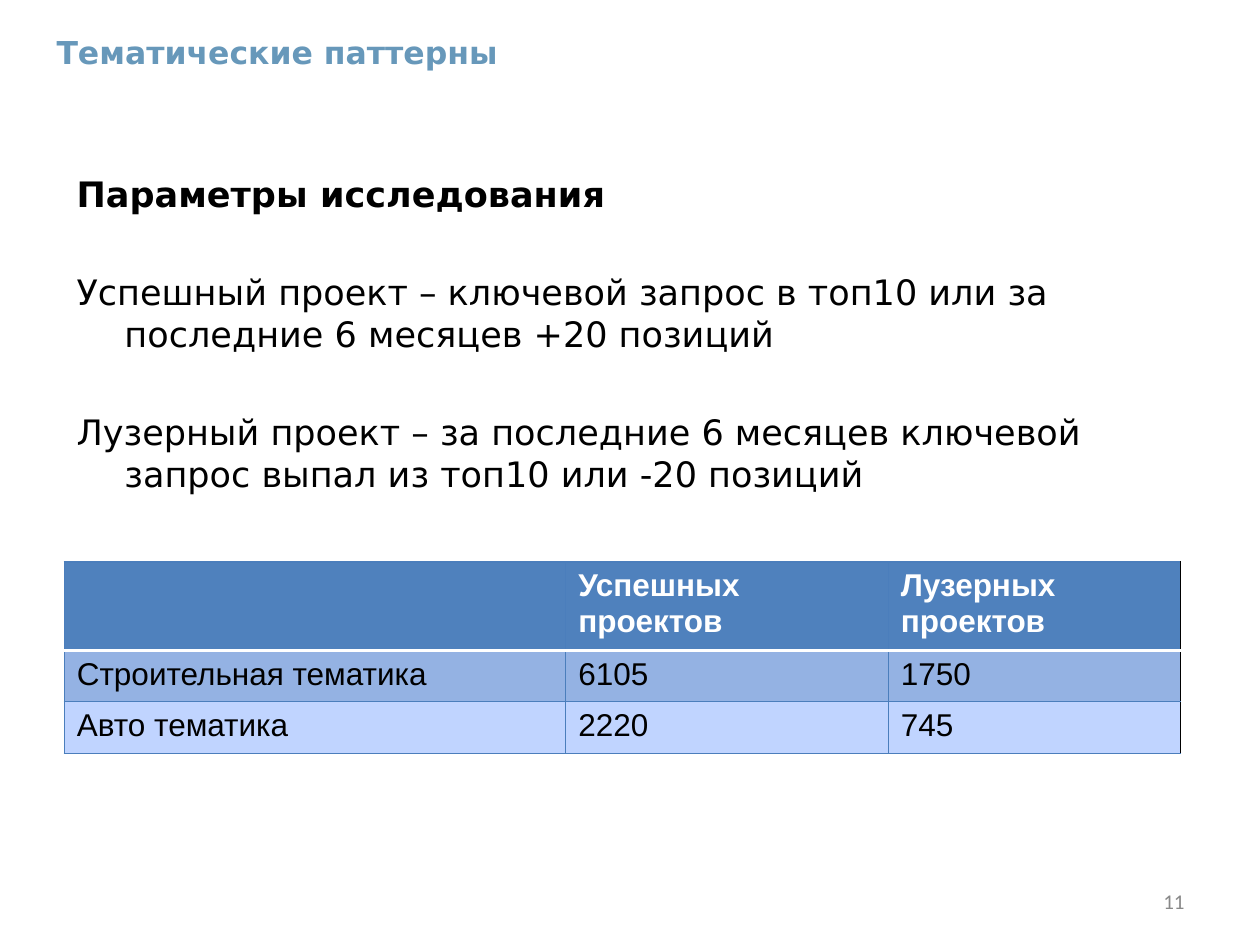
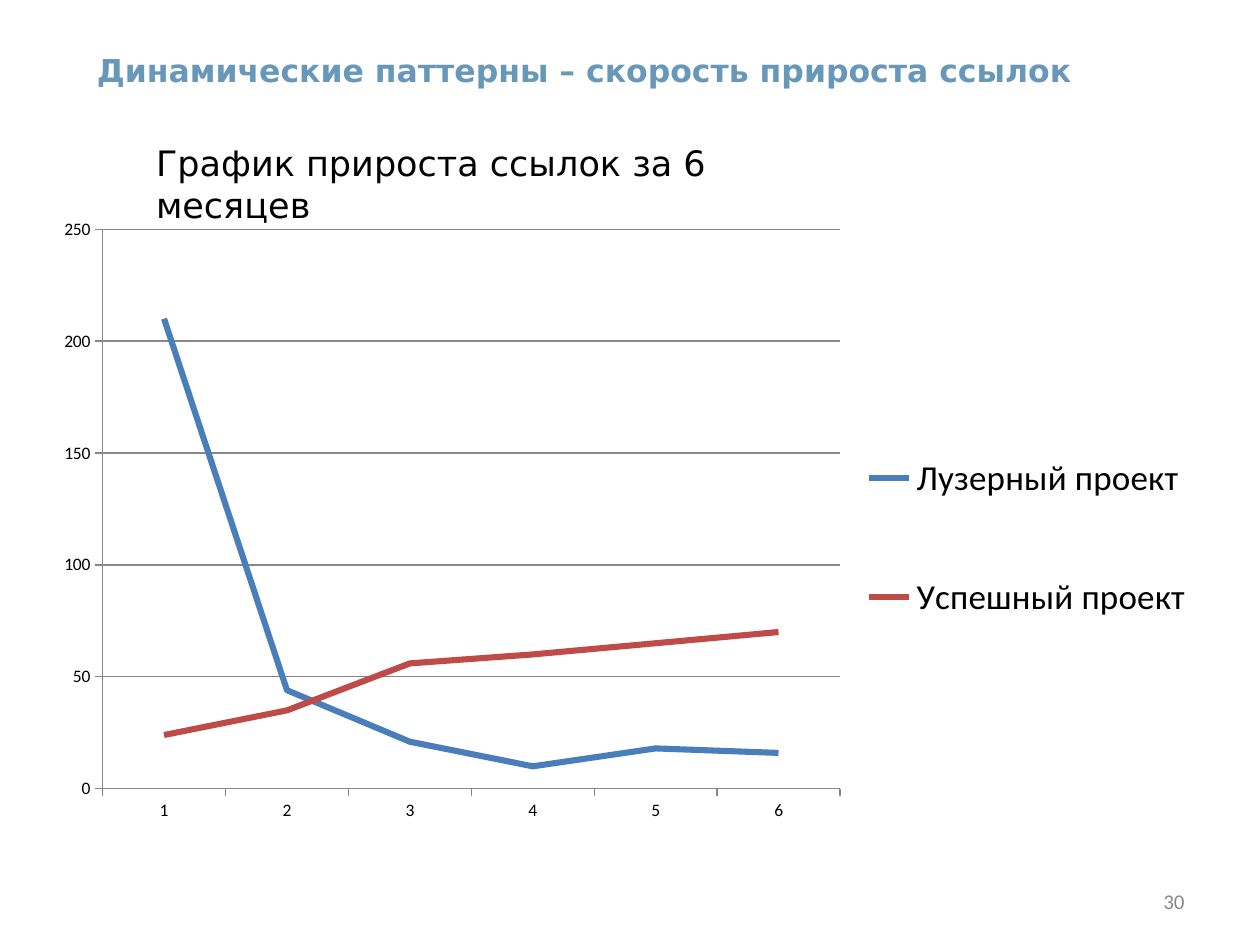
from lxml import etree
from pptx import Presentation
from pptx.chart.data import CategoryChartData
from pptx.dml.color import RGBColor
from pptx.enum import chart as charts, text
from pptx.oxml import ns
from pptx.util import Inches, Pt

# Content
THEMES = {
    "title": "Тематические паттерны",
    "heading": "Параметры исследования",
    "definitions": [
        "Успешный проект – ключевой запрос в топ10 или за последние 6 месяцев +20 позиций",
        "Лузерный проект – за последние 6 месяцев ключевой запрос выпал из топ10 или -20 позиций",
    ],
    "rows": [
        ("", "Успешных проектов", "Лузерных проектов"),
        ("Строительная тематика", "6105", "1750"),
        ("Авто тематика", "2220", "745"),
    ],
    "number": "11",
}
GROWTH = {
    "title": "Динамические паттерны – скорость прироста ссылок",
    "caption": "График прироста ссылок за 6 месяцев",
    "months": ["1", "2", "3", "4", "5", "6"],
    "series": [
        ("Лузерный проект", (210, 44, 21, 10, 18, 16), "4A7EBB"),
        ("Успешный проект", (24, 35, 56, 60, 65, 70), "BE4B48"),
    ],
    "number": "30",
}

# Shared look
MAIN_FONT, SMALL_FONT, TABLE_FONT = "DejaVu Sans", "Calibri", "Arial"
TITLE, BLACK, WHITE, GREY, AXIS = "6798BA", "000000", "FFFFFF", "898989", "878787"
BORDER = "4B7EBC"
ROW_FILLS = ["4F81BD", "94B2E3", "C0D4FF"]
COLUMN_WIDTHS = [3.98, 2.56, 2.32]
ROW_HEIGHTS = [0.67, 0.41, 0.41]


def color(value):
    return RGBColor.from_string(value)


def style(font, name, size, tint, bold=False):
    font.name, font.size, font.bold = name, Pt(size), bold
    font.color.rgb = color(tint)


def add_text(page, area, paragraphs, name, size, tint, bold=False, wrap=True):
    box = page.shapes.add_textbox(*map(Inches, area))
    frame = box.text_frame
    frame.word_wrap = wrap
    frame.text = "\n".join(paragraphs)
    for para in frame.paragraphs:
        style(para.font, name, size, tint, bold)
    return frame


def add_page(deck, content, title_area):
    """Blank page with the common title and page number."""
    page = deck.slides.add_slide(deck.slide_layouts[6])
    add_text(page, title_area, [content["title"]], MAIN_FONT, 18, TITLE, True, wrap=False)
    number = add_text(page, (7.17, 6.95, 2.33, 0.4), [content["number"]], SMALL_FONT, 12, GREY)
    number.vertical_anchor = text.MSO_ANCHOR.MIDDLE
    number.paragraphs[0].alignment = text.PP_ALIGN.RIGHT
    return page


def set_border(cell, side, tint, width):
    line = etree.SubElement(cell._tc.get_or_add_tcPr(), ns.qn(f"a:ln{side}"), w=str(Pt(width)))
    fill = etree.SubElement(line, ns.qn("a:solidFill"))
    etree.SubElement(fill, ns.qn("a:srgbClr"), val=tint)


def add_table(page, rows, left, top):
    frame = page.shapes.add_table(len(rows), len(COLUMN_WIDTHS), Inches(left), Inches(top),
                                  Inches(sum(COLUMN_WIDTHS)), Inches(sum(ROW_HEIGHTS)))
    table = frame.table
    for column, width in zip(table.columns, COLUMN_WIDTHS):
        column.width = Inches(width)
    for r, row in enumerate(rows):
        table.rows[r].height = Inches(ROW_HEIGHTS[r])
        for c, value in enumerate(row):
            cell = table.cell(r, c)
            cell.text = value
            header = r == 0
            style(cell.text_frame.paragraphs[0].font, TABLE_FONT, 18,
                  WHITE if header else BLACK, header)
            plain, divider = (BORDER, 0.75), (WHITE, 2)
            last = c == len(row) - 1
            set_border(cell, "L", *plain)
            set_border(cell, "R", *((BLACK, 1) if last else plain))
            set_border(cell, "T", *(divider if r == 1 else plain))
            set_border(cell, "B", *(divider if header else plain))
            cell.fill.solid()
            cell.fill.fore_color.rgb = color(ROW_FILLS[r])


def place(element, index, area, inner=False):
    """Fix the place of a chart part, in fractions of the chart."""
    for old in element.findall(ns.qn("c:layout")):
        element.remove(old)
    layout = etree.Element(ns.qn("c:layout"))
    element.insert(index, layout)
    manual = etree.SubElement(layout, ns.qn("c:manualLayout"))
    settings = [("layoutTarget", "inner")] if inner else []
    settings += [("xMode", "edge"), ("yMode", "edge"), *zip("xywh", area)]
    for tag, value in settings:
        etree.SubElement(manual, ns.qn(f"c:{tag}"), val=str(value))


def draw_line(line, tint, width):
    line.color.rgb = color(tint)
    line.width = Pt(width)


def add_growth_chart(page, area):
    data = CategoryChartData()
    data.categories = GROWTH["months"]
    for name, values, _ in GROWTH["series"]:
        data.add_series(name, values)
    chart = page.shapes.add_chart(charts.XL_CHART_TYPE.LINE, *map(Inches, area), data).chart
    chart.has_title = False
    style(chart.font, SMALL_FONT, 10, BLACK)
    chart.plots[0].vary_by_categories = False
    for series, (_, _, tint) in zip(chart.plots[0].series, GROWTH["series"]):
        series.smooth = False
        series.marker.style = charts.XL_MARKER_STYLE.NONE
        draw_line(series.format.line, tint, 3.5)

    # Axes
    for axis in (chart.category_axis, chart.value_axis):
        axis.major_tick_mark = charts.XL_TICK_MARK.OUTSIDE
        axis.minor_tick_mark = charts.XL_TICK_MARK.NONE
        draw_line(axis.format.line, AXIS, 0.75)
    values = chart.value_axis
    values.minimum_scale, values.maximum_scale, values.major_unit = 0, 250, 50
    values.has_major_gridlines = True
    draw_line(values.major_gridlines.format.line, AXIS, 0.75)

    # Legend and plot area
    chart.has_legend = True
    legend = chart.legend
    legend.position = charts.XL_LEGEND_POSITION.RIGHT
    legend.include_in_layout = False
    style(legend.font, SMALL_FONT, 20, BLACK)
    place(legend._element, 1, (0.69, 0.28, 0.3, 0.5))
    plot_area = chart._chartSpace.find(".//" + ns.qn("c:plotArea"))
    place(plot_area, 0, (0.05, 0.04, 0.63, 0.89), inner=True)


def build_themes(deck):
    page = add_page(deck, THEMES, (0.35, 0.21, 3.72, 0.4))
    frame = add_text(page, (0.51, 1.32, 8.74, 2.9), [THEMES["heading"], *THEMES["definitions"]],
                     MAIN_FONT, 20, BLACK)
    heading, *definitions = frame.paragraphs
    heading.font.bold = True
    for para in definitions:
        para.space_before = Pt(32)
        properties = para._p.get_or_add_pPr()
        properties.set("marL", str(Inches(0.38)))
        properties.set("indent", str(Inches(-0.38)))
    add_table(page, THEMES["rows"], 0.51, 4.46)


def build_growth(deck):
    page = add_page(deck, GROWTH, (0.67, 0.36, 8.04, 0.4))
    add_growth_chart(page, (0.35, 1.62, 9.29, 4.99))
    add_text(page, (1.14, 1.07, 5.0, 0.75), [GROWTH["caption"]], MAIN_FONT, 20, BLACK)


def main():
    deck = Presentation()
    deck.slide_width, deck.slide_height = Inches(10), Inches(7.5)
    build_themes(deck)
    build_growth(deck)
    deck.save("out.pptx")


if __name__ == "__main__":
    main()
